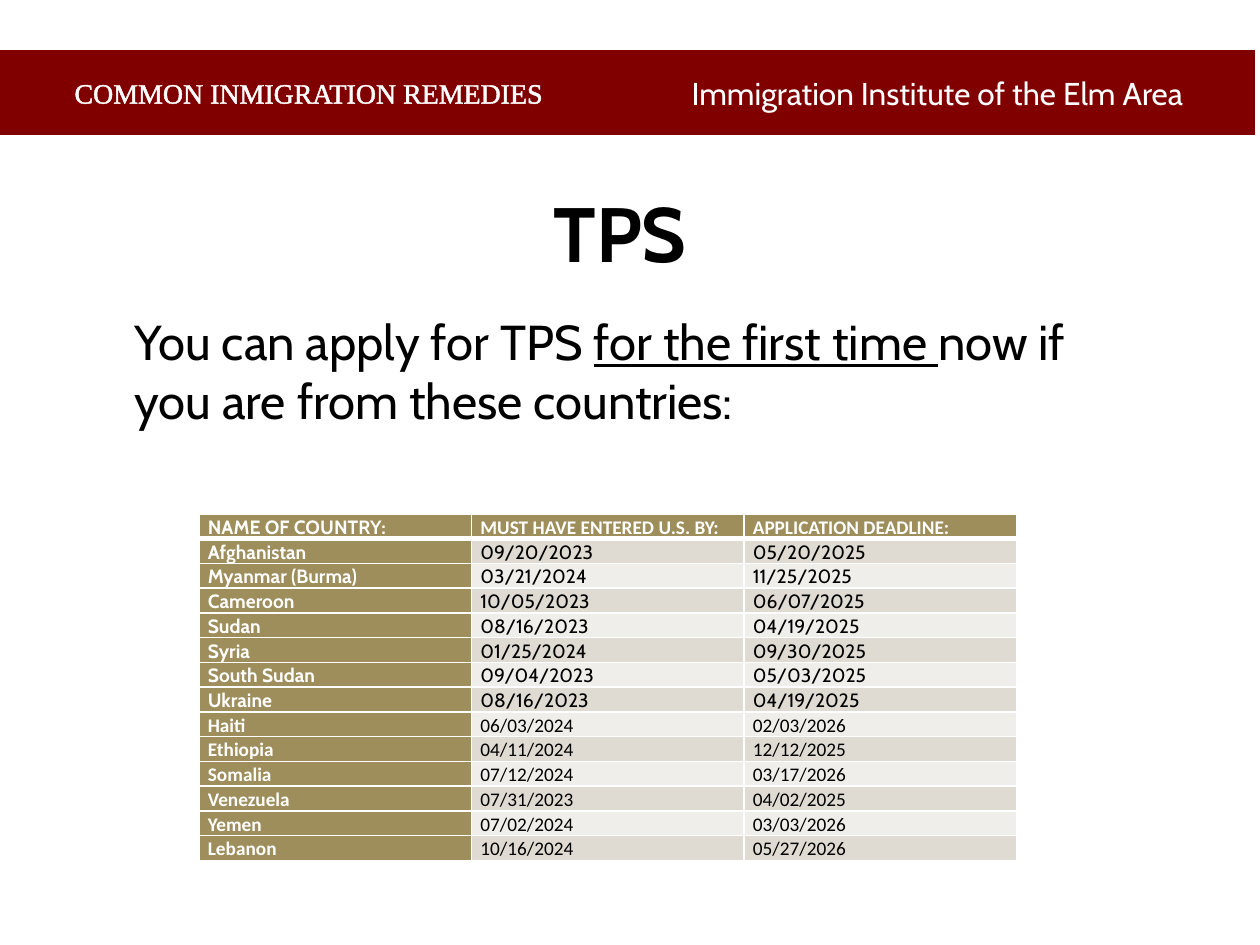
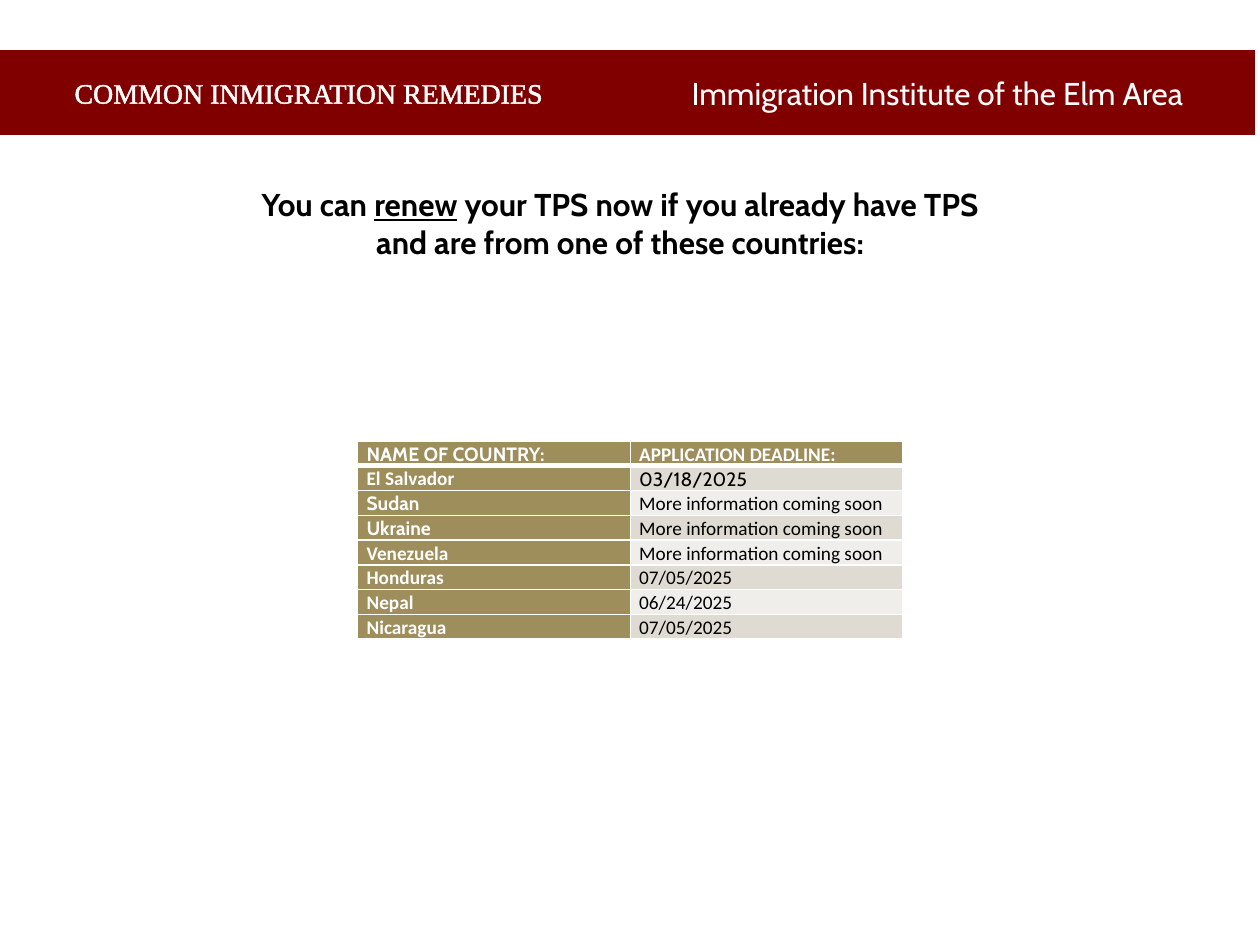
from dataclasses import dataclass

from lxml import etree
from pptx import Presentation
from pptx.dml.color import RGBColor
from pptx.enum.shapes import MSO_SHAPE
from pptx.enum.text import MSO_ANCHOR, MSO_AUTO_SIZE, PP_ALIGN
from pptx.oxml.ns import qn
from pptx.util import Cm, Pt

RECTANGLE = MSO_SHAPE.RECTANGLE
TOP, MIDDLE = MSO_ANCHOR.TOP, MSO_ANCHOR.MIDDLE
LEFT, CENTER, RIGHT = PP_ALIGN.LEFT, PP_ALIGN.CENTER, PP_ALIGN.RIGHT
NO_FIT = MSO_AUTO_SIZE.NONE
TITLE_AND_CONTENT, TITLE_ONLY = 1, 5


@dataclass(frozen=True)
class Theme:
    white: str = "FFFFFF"
    ink: str = "000000"
    maroon: str = "800000"
    gold: str = "9E8E5C"
    stripes: tuple = ("F0EEEA", "DFDBD2")
    sans: str = "Cabin"
    plain: str = "Calibri"
    serif: str = "Times New Roman"
    huge: int = 44
    large: int = 28
    medium: int = 18
    caption: int = 16
    small: int = 11


THEME = Theme()

BAND_BOX = (-0.2, 0.91, 25.6, 1.91)
CAPTION_BOX = (0, 1.4, 12.45, 0.94)
TITLE_BOX = (2.57, 3.61, 19.86, 2.13)
INTRO_BOX = (2.46, 6.15, 20.6, 3.8)
FIRST_TIME_BOX = (4.01, 10.36, 16.48, 6.66)
RENEWAL_BOX = (7.21, 8.89, 10.99, 3.81)

COUNTRY, ENTRY, DEADLINE = (
    "NAME OF COUNTRY:", "MUST HAVE ENTERED U.S. BY:", "APPLICATION DEADLINE:")
SOON = "More information coming soon"

FIRST_TIME_ROWS = [
    (COUNTRY, ENTRY, DEADLINE),
    ("Afghanistan", "09/20/2023", "05/20/2025"),
    ("Myanmar (Burma)", "03/21/2024", "11/25/2025"),
    ("Cameroon", "10/05/2023", "06/07/2025"),
    ("Sudan", "08/16/2023", "04/19/2025"),
    ("Syria", "01/25/2024", "09/30/2025"),
    ("South Sudan", "09/04/2023", "05/03/2025"),
    ("Ukraine", "08/16/2023", "04/19/2025"),
    ("Haiti", "06/03/2024", "02/03/2026"),
    ("Ethiopia", "04/11/2024", "12/12/2025"),
    ("Somalia", "07/12/2024", "03/17/2026"),
    ("Venezuela", "07/31/2023", "04/02/2025"),
    ("Yemen", "07/02/2024", "03/03/2026"),
    ("Lebanon", "10/16/2024", "05/27/2026"),
]
FIRST_TIME_SANS = {(0, 0)} | {(row, column) for row in range(1, 8) for column in range(3)}

RENEWAL_ROWS = [
    (COUNTRY, DEADLINE),
    ("El Salvador", "03/18/2025"),
    ("Sudan", SOON),
    ("Ukraine", SOON),
    ("Venezuela", SOON),
    ("Honduras", "07/05/2025"),
    ("Nepal", "06/24/2025"),
    ("Nicaragua", "07/05/2025"),
]
RENEWAL_SANS = {(0, 0), (1, 1), (2, 0), (3, 0)}


def apply(target, values):
    for name, value in values.items():
        setattr(target, name, value)


def color(code):
    return RGBColor.from_string(code)


def place(shape, box):
    apply(shape, dict(zip(("left", "top", "width", "height"), map(Cm, box))))


def write_para(para, spans, size, ink=THEME.ink, font=THEME.sans, bold=False, align=LEFT):
    para.alignment = align
    for text, underline in spans:
        span = para.add_run()
        span.text = text
        apply(span.font, {"name": font, "size": Pt(size), "bold": bold, "underline": underline})
        span.font.color.rgb = color(ink)
    return para


def add_line(parent, tag, code, points):
    line = etree.Element(qn(tag), w=str(Pt(points)))
    fill = etree.SubElement(line, qn("a:solidFill"))
    etree.SubElement(fill, qn("a:srgbClr"), val=code)
    parent.insert(0, line)


def add_band(page, box):
    band = page.shapes.add_shape(RECTANGLE, *map(Cm, box))
    band.shadow.inherit = False
    band.fill.solid()
    band.fill.fore_color.rgb = color(THEME.maroon)
    band.line.color.rgb = color(THEME.white)
    band.line.width = Pt(6)
    apply(band.text_frame, {"vertical_anchor": MIDDLE, "margin_right": Cm(1.55)})
    write_para(band.text_frame.paragraphs[0],
               [("Immigration Institute of the Elm Area", False)],
               THEME.medium, THEME.white, align=RIGHT)


def add_caption(page, box):
    caption = page.shapes.add_textbox(*map(Cm, box))
    caption.text_frame.word_wrap = True
    para = write_para(caption.text_frame.paragraphs[0],
                      [("COMMON INMIGRATION REMEDIES", False)],
                      THEME.caption, THEME.white, THEME.serif, align=CENTER)
    add_line(para.runs[0].font._element, "a:ln", THEME.white, 1.45)


def fill_placeholder(holder, box, lines, size, bold, align):
    place(holder, box)
    frame = holder.text_frame
    apply(frame, {"vertical_anchor": TOP, "auto_size": NO_FIT, "word_wrap": True})
    for index, spans in enumerate(lines):
        para = frame.add_paragraph() if index else frame.paragraphs[0]
        write_para(para, spans, size, bold=bold, align=align)
        apply(para, {"space_before": Pt(0), "line_spacing": 1.0})
    return frame


def set_indent(para, indent):
    properties = para._p.get_or_add_pPr()
    apply_values = {"marL": 0, "indent": Cm(indent)}
    for name, value in apply_values.items():
        properties.set(name, str(value))
    return properties


def format_cell(cell, text, row, column, font):
    heading = row == 0 or column == 0
    apply(cell, {"margin_left": Cm(0.18), "margin_right": Cm(0.18),
                 "margin_top": 0, "margin_bottom": 0})
    para = write_para(cell.text_frame.paragraphs[0], [(text, False)], THEME.small,
                      THEME.white if heading else THEME.ink, font, heading)
    para.line_spacing = 1.07
    cell.fill.solid()
    cell.fill.fore_color.rgb = color(THEME.gold if heading else THEME.stripes[row % 2])
    widths = {"a:lnB": 3 if row == 0 else 1, "a:lnT": 3 if row == 1 else 1,
              "a:lnR": 1, "a:lnL": 1}
    for tag, points in widths.items():
        add_line(cell._tc.get_or_add_tcPr(), tag, THEME.white, points)


def add_country_table(page, box, rows, sans_cells):
    table = page.shapes.add_table(len(rows), len(rows[0]), *map(Cm, box)).table
    for column in table.columns:
        column.width = Cm(box[2] / len(rows[0]))
    for row, texts in enumerate(rows):
        table.rows[row].height = Cm(box[3] / len(rows))
        for column, text in enumerate(texts):
            font = THEME.sans if (row, column) in sans_cells else THEME.plain
            format_cell(table.cell(row, column), text, row, column, font)


def add_page(deck, layout):
    page = deck.slides.add_slide(deck.slide_layouts[layout])
    add_band(page, BAND_BOX)
    add_caption(page, CAPTION_BOX)
    return page


def add_first_time_page(deck):
    page = add_page(deck, TITLE_AND_CONTENT)
    fill_placeholder(page.shapes.title, TITLE_BOX, [[("TPS", False)]],
                     THEME.huge, True, CENTER)
    intro = [("You can apply for TPS ", False), ("for the first time ", True),
             ("now if you are from these countries:", False)]
    frame = fill_placeholder(page.placeholders[1], INTRO_BOX, [intro],
                             THEME.large, False, LEFT)
    etree.SubElement(set_indent(frame.paragraphs[0], 0), qn("a:buNone"))
    add_country_table(page, FIRST_TIME_BOX, FIRST_TIME_ROWS, FIRST_TIME_SANS)


def add_renewal_page(deck):
    page = add_page(deck, TITLE_ONLY)
    lines = [
        [("You can ", False), ("renew", True),
         (" your TPS now if you already have TPS", False)],
        [("and are from one of these countries:", False)],
    ]
    frame = fill_placeholder(page.shapes.title, TITLE_BOX, lines,
                             THEME.medium, True, CENTER)
    set_indent(frame.paragraphs[1], -0.45)
    add_country_table(page, RENEWAL_BOX, RENEWAL_ROWS, RENEWAL_SANS)


def main():
    deck = Presentation()
    apply(deck, {"slide_width": Cm(25.4), "slide_height": Cm(19.05)})
    add_first_time_page(deck)
    add_renewal_page(deck)
    deck.save("out.pptx")


if __name__ == "__main__":
    main()
